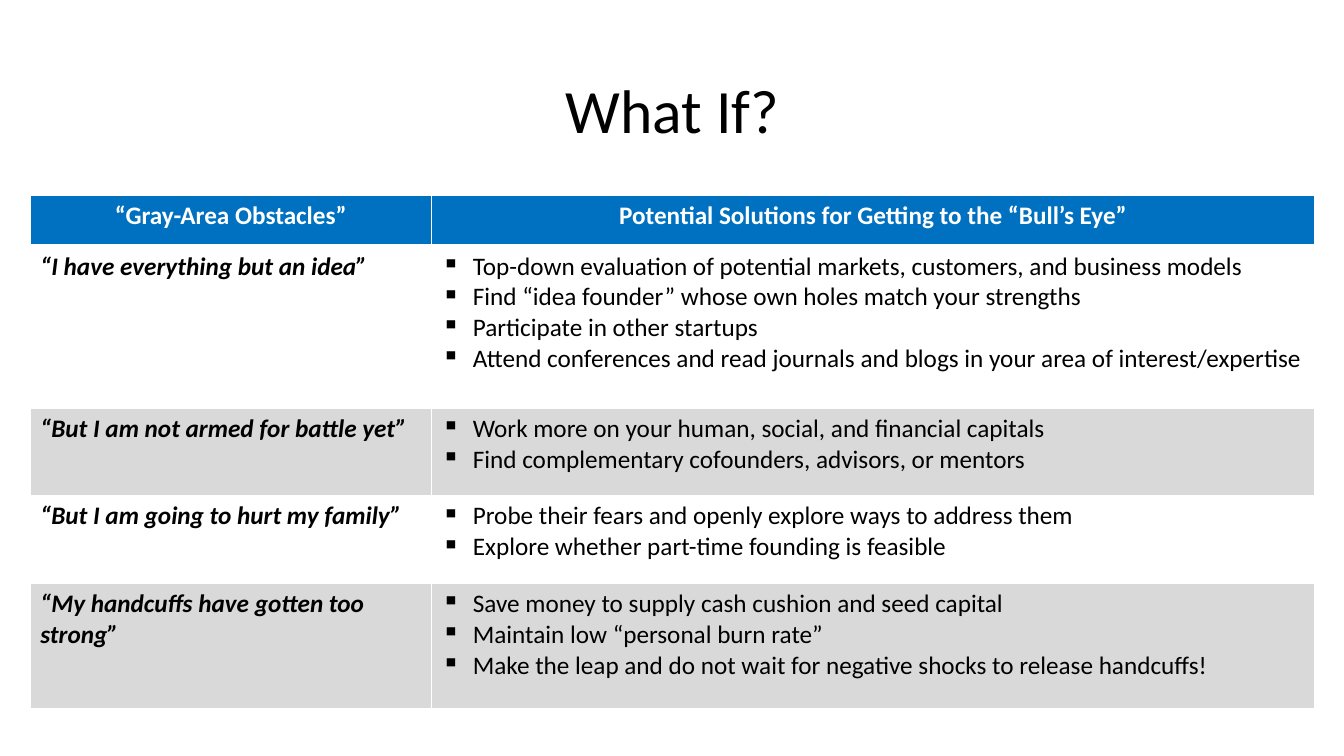
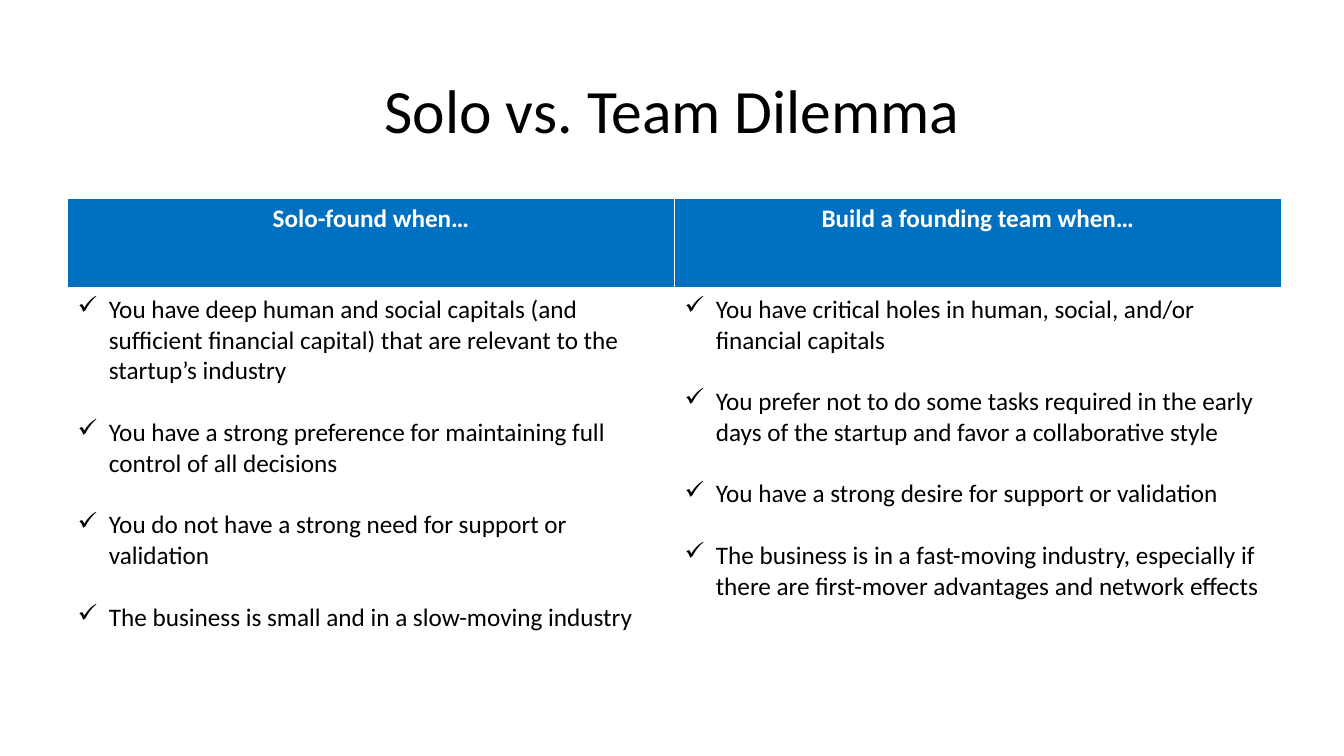
"""Build two slides on founding obstacles and the solo versus team choice."""
from dataclasses import dataclass
from typing import Any

from lxml.etree import SubElement
from pptx import Presentation
from pptx.dml.color import RGBColor as Rgb
from pptx.enum.text import MSO_ANCHOR as Anchor, PP_ALIGN as Align
from pptx.oxml.ns import qn
from pptx.util import Inches, Pt


@dataclass(frozen=True)
class Theme:
    font: str = "Calibri"
    title_size: int = 44
    text_size: int = 18
    ink: str = "000000"
    paper: str = "FFFFFF"
    header: str = "0070C0"
    band: str = "D9D9D9"
    grid_width: int = 1
    header_rule: int = 3
    indent: float = 0.31


@dataclass(frozen=True)
class Bullets:
    mark: str
    items: tuple[str, ...]
    gap: int = 0


Content = str | Bullets


@dataclass(frozen=True)
class Page:
    title: str
    left: float
    top: float
    widths: tuple[float, ...]
    heights: tuple[float, ...]
    rows: tuple[tuple[Content, ...], ...]


THEME = Theme()
TITLE_BOX = {"left": Inches(0.92), "top": Inches(0.4),
             "width": Inches(11.5), "height": Inches(1.45)}


def squares(*items: str) -> Bullets:
    return Bullets("▪", items)


def checks(*items: str) -> Bullets:
    return Bullets("✓", items, gap=22)


PAGES = (
    Page("What If?", 0.3, 1.94, (3.98, 8.76), (0.5, 1.61, 0.87, 0.87, 1.24), (
        ("“Gray-Area Obstacles”", "Potential Solutions for Getting to the “Bull’s Eye”"),
        ("“I have everything but an idea”", squares(
            "Top-down evaluation of potential markets, customers, and business models",
            "Find “idea founder” whose own holes match your strengths",
            "Participate in other startups",
            "Attend conferences and read journals and blogs in your area of interest/expertise")),
        ("“But I am not armed for battle yet”", squares(
            "Work more on your human, social, and financial capitals",
            "Find complementary cofounders, advisors, or mentors")),
        ("“But I am going to hurt my family”", squares(
            "Probe their fears and openly explore ways to address them",
            "Explore whether part-time founding is feasible")),
        ("“My handcuffs have gotten too strong”", squares(
            "Save money to supply cash cushion and seed capital",
            "Maintain low “personal burn rate”",
            "Make the leap and do not wait for negative shocks to release handcuffs!")),
    )),
    Page("Solo vs. Team Dilemma", 0.67, 1.97, (6.02, 6.02), (0.9, 3.8), (
        ("Solo-found when…", "Build a founding team when…"),
        (checks(
            "You have deep human and social capitals (and sufficient financial capital) "
            "that are relevant to the startup’s industry",
            "You have a strong preference for maintaining full control of all decisions",
            "You do not have a strong need for support or validation",
            "The business is small and in a slow-moving industry"),
         checks(
            "You have critical holes in human, social, and/or financial capitals",
            "You prefer not to do some tasks required in the early days of the startup "
            "and favor a collaborative style",
            "You have a strong desire for support or validation",
            "The business is in a fast-moving industry, especially if there are "
            "first-mover advantages and network effects")),
    )),
)


def apply(target: Any, values: dict[str, Any]) -> None:
    for name, value in values.items():
        setattr(target, name, value)


def write(paragraph: Any, text: str, size: int, color: str,
          layout: dict[str, Any], **style: bool) -> None:
    apply(paragraph, layout)
    run = paragraph.add_run()
    run.text = text
    apply(run.font, {"name": THEME.font, "size": Pt(size), **style})
    run.font.color.rgb = Rgb.from_string(color)


def add_bullet(paragraph: Any, mark: str) -> None:
    properties = paragraph._p.get_or_add_pPr()
    indent = Inches(THEME.indent)
    properties.set("marL", str(indent))
    properties.set("indent", str(-indent))
    SubElement(properties, qn("a:buChar"), char=mark)


def add_borders(cell: Any, is_header: bool) -> None:
    properties = cell._tc.get_or_add_tcPr()
    for side in "LRTB":
        width = THEME.header_rule if is_header and side == "B" else THEME.grid_width
        border = SubElement(properties, qn(f"a:ln{side}"), w=str(Pt(width)))
        fill = SubElement(border, qn("a:solidFill"))
        SubElement(fill, qn("a:srgbClr"), val=THEME.paper)


def fill_cell(cell: Any, content: Content, row: int) -> None:
    is_header = row == 0
    add_borders(cell, is_header)
    cell.fill.solid()
    stripe = THEME.paper if row % 2 else THEME.band
    cell.fill.fore_color.rgb = Rgb.from_string(THEME.header if is_header else stripe)
    frame = cell.text_frame
    if isinstance(content, Bullets):
        for index, item in enumerate(content.items):
            paragraph = frame.add_paragraph() if index else frame.paragraphs[0]
            layout = {"space_before": Pt(content.gap if index else 0)}
            write(paragraph, item, THEME.text_size, THEME.ink, layout, bold=False)
            add_bullet(paragraph, content.mark)
    else:
        layout = {"alignment": Align.CENTER if is_header else Align.LEFT}
        color = THEME.paper if is_header else THEME.ink
        write(frame.paragraphs[0], content, THEME.text_size, color, layout,
              bold=True, italic=not is_header)


def add_page(deck: Any, page: Page) -> None:
    slide = deck.slides.add_slide(deck.slide_layouts.get_by_name("Title Only"))
    title = slide.shapes.title
    apply(title, TITLE_BOX)
    title.text_frame.vertical_anchor = Anchor.MIDDLE
    write(title.text_frame.paragraphs[0], page.title, THEME.title_size, THEME.ink,
          {"alignment": Align.CENTER, "line_spacing": 0.9})
    table = slide.shapes.add_table(
        len(page.heights), len(page.widths), Inches(page.left), Inches(page.top),
        Inches(sum(page.widths)), Inches(sum(page.heights))).table
    for column, width in zip(table.columns, page.widths):
        column.width = Inches(width)
    for row, (height, contents) in enumerate(zip(page.heights, page.rows)):
        table.rows[row].height = Inches(height)
        for cell, content in zip(table.rows[row].cells, contents):
            fill_cell(cell, content, row)


def main() -> None:
    deck = Presentation()
    apply(deck, {"slide_width": Inches(13.33), "slide_height": Inches(7.5)})
    for page in PAGES:
        add_page(deck, page)
    deck.save("out.pptx")


if __name__ == "__main__":
    main()
